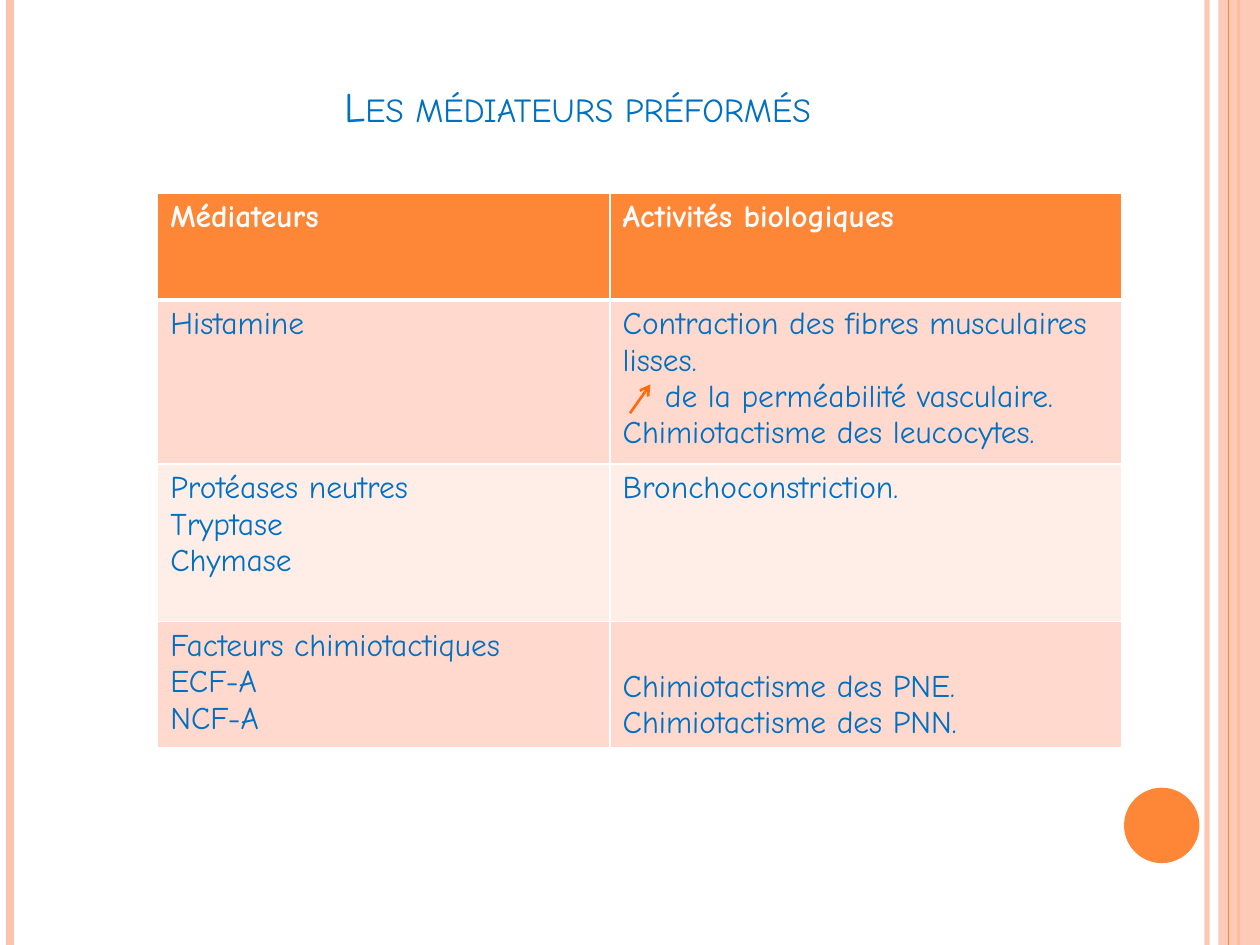
from lxml import etree
from pptx import Presentation
from pptx.dml.color import RGBColor
from pptx.enum.shapes import MSO_CONNECTOR, MSO_SHAPE
from pptx.enum.text import MSO_ANCHOR, PP_ALIGN
from pptx.oxml.ns import qn
from pptx.util import Cm, Pt

STRAIGHT = MSO_CONNECTOR.STRAIGHT
RECTANGLE, OVAL = MSO_SHAPE.RECTANGLE, MSO_SHAPE.OVAL
CENTER = PP_ALIGN.CENTER
TOP, BOTTOM = MSO_ANCHOR.TOP, MSO_ANCHOR.BOTTOM

THEME = {
    "font": "Comic Neue", "title_size": 24, "body_size": 18,
    "text": "0070C0", "white": "FFFFFF", "orange": "FE8637", "peach": "FEC3AE",
    "arrow": "FF6B0A", "bands": ("FFD9CE", "FFEDE8"),
}
WIDTH, HEIGHT = 25.4, 19.05

TITLE = "Les médiateurs préformés"
HEADERS = ("Médiateurs", "Activités biologiques")
INCREASED = "de la perméabilité vasculaire."  # the arrow stands before this line
# mediators, activities, anchor of the activities, row height
MEDIATORS = [
    (["Histamine"],
     ["Contraction des fibres musculaires lisses.", INCREASED,
      "Chimiotactisme des leucocytes."], TOP, 3.18),
    (["Protéases neutres", "Tryptase", "Chymase"],
     ["Bronchoconstriction."], TOP, 3.18),
    (["Facteurs chimiotactiques", "ECF-A", "NCF-A"],
     ["Chimiotactisme des PNE.", "Chimiotactisme des PNN."], BOTTOM, 2.46),
]
HEADER_HEIGHT = 2.16
COLUMN_WIDTHS = (9.12, 10.31)
ARROW_INDENT = 0.85


def rgb(name):
    return RGBColor.from_string(THEME.get(name, name))


def set_alpha(fill_format, percent):
    color = fill_format._xPr.find(qn("a:solidFill"))[0]
    etree.SubElement(color, qn("a:alpha"), val=str(percent * 1000))


def add_line(slide, start, end, color, weight):
    line = slide.shapes.add_connector(STRAIGHT, *map(Cm, start + end))
    line.line.color.rgb = rgb(color)
    line.line.width = Pt(weight)
    etree.SubElement(line._element.spPr, qn("a:effectLst"))
    return line


def add_stripe(slide, x, color, weight):
    return add_line(slide, (x, 0), (x, HEIGHT), color, weight)


def add_filled(slide, kind, left, top, width, height, color):
    shape = slide.shapes.add_shape(kind, *map(Cm, (left, top, width, height)))
    shape.shadow.inherit = False
    shape.fill.solid()
    shape.fill.fore_color.rgb = rgb(color)
    shape.line.fill.background()
    return shape


def add_run(paragraph, text, size, color, bold=False):
    run = paragraph.add_run()
    run.text = text
    run.font.name = THEME["font"]
    run.font.size = Pt(THEME[size])
    run.font.color.rgb = rgb(color)
    run.font.bold = bold
    return run


def set_borders(cell, bottom_weight):
    """Draw white cell borders; they must precede the fill in the XML."""
    properties = cell._tc.get_or_add_tcPr()
    for position, side in enumerate(("L", "R", "T", "B")):
        weight = bottom_weight if side == "B" else 1
        border = etree.Element(qn(f"a:ln{side}"), w=str(Pt(weight)))
        fill = etree.SubElement(border, qn("a:solidFill"))
        etree.SubElement(fill, qn("a:srgbClr"), val=THEME["white"])
        properties.insert(position, border)


def fill_cell(cell, lines, background, color, header=False, anchor=TOP):
    cell.fill.solid()
    cell.fill.fore_color.rgb = rgb(background)
    cell.vertical_anchor = anchor
    set_borders(cell, 3 if header else 1)
    frame = cell.text_frame
    for index, text in enumerate(lines):
        paragraph = frame.add_paragraph() if index else frame.paragraphs[0]
        if text == INCREASED:
            paragraph._p.get_or_add_pPr().set("marL", str(Cm(ARROW_INDENT)))
        add_run(paragraph, text, "body_size", color, header)


def add_decor(slide):
    outer = add_stripe(slide, 24.33, "peach", 3)
    set_alpha(outer.line.fill, 93)
    add_stripe(slide, 0.2, "peach", 4.5)
    add_stripe(slide, 24.97, "orange", 1.5)
    band_left = 24.56
    band = add_filled(slide, RECTANGLE, band_left, 0, WIDTH - band_left, HEIGHT, "peach")
    set_alpha(band.fill, 87)
    add_stripe(slide, 24.77, "orange", 0.75)
    add_filled(slide, OVAL, 22.66, 15.88, 1.52, 1.52, "orange")


def add_title(slide):
    title = slide.shapes.add_textbox(Cm(1.27), Cm(-0.4), Cm(20.75), Cm(3.17))
    frame = title.text_frame
    frame.word_wrap = True
    frame.vertical_anchor = BOTTOM
    paragraph = frame.paragraphs[0]
    paragraph.alignment = CENTER
    run = add_run(paragraph, TITLE, "title_size", "text")
    run.font._element.set("cap", "small")


def add_mediator_table(slide):
    heights = [HEADER_HEIGHT] + [row[-1] for row in MEDIATORS]
    table = slide.shapes.add_table(
        len(heights), len(HEADERS), Cm(3.18), Cm(3.89),
        Cm(sum(COLUMN_WIDTHS)), Cm(sum(heights))).table
    for column, width in zip(table.columns, COLUMN_WIDTHS):
        column.width = Cm(width)
    for row, height in zip(table.rows, heights):
        row.height = Cm(height)
    for index, header in enumerate(HEADERS):
        fill_cell(table.cell(0, index), [header], "orange", "white", header=True)
    for index, (mediators, activities, anchor, _) in enumerate(MEDIATORS):
        band = THEME["bands"][index % 2]
        fill_cell(table.cell(index + 1, 0), mediators, band, "text")
        fill_cell(table.cell(index + 1, 1), activities, band, "text", anchor=anchor)


def add_increase_arrow(slide):
    arrow = add_line(slide, (12.7, 8.33), (13.11, 7.75), "arrow", 1.5)
    etree.SubElement(arrow.line._get_or_add_ln(), qn("a:tailEnd"), type="arrow")


def main():
    deck = Presentation()
    deck.slide_width, deck.slide_height = Cm(WIDTH), Cm(HEIGHT)
    slide = deck.slides.add_slide(deck.slide_layouts[6])
    add_decor(slide)
    add_title(slide)
    add_mediator_table(slide)
    add_increase_arrow(slide)
    deck.save("out.pptx")


if __name__ == "__main__":
    main()
